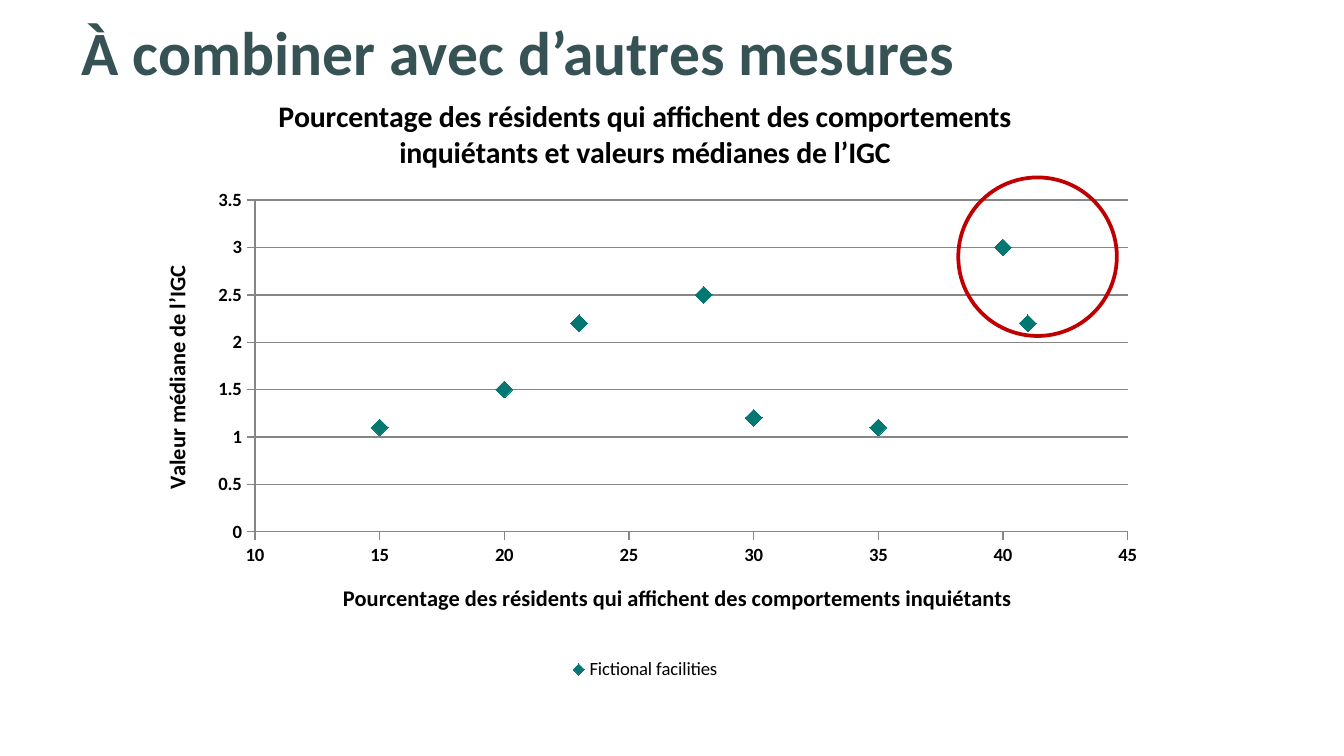
from pptx import Presentation
from pptx.chart.data import XyChartData
from pptx.dml.color import RGBColor as Rgb
from pptx.enum.chart import XL_CHART_TYPE as Kind, XL_LEGEND_POSITION as Side
from pptx.enum.chart import XL_MARKER_STYLE as Mark, XL_TICK_MARK as Tick
from pptx.enum.shapes import MSO_SHAPE as Shape
from pptx.enum.text import MSO_ANCHOR as Anchor
from pptx.oxml import parse_xml
from pptx.oxml.ns import nsdecls, qn
from pptx.util import Inches, Pt

WIDE = 10
HIGH = WIDE * 9 / 16
HEAD = "À combiner avec d’autres mesures"
TITLE = ("Pourcentage des résidents qui affichent des comportements "
         "inquiétants et valeurs médianes de l’IGC")
SERIES = "Fictional facilities"
POINTS = [(20, 1.5), (30, 1.2), (15, 1.1), (35, 1.1),
          (41, 2.2), (23, 2.2), (40, 3), (28, 2.5)]
AXES = {
    "x": ("Pourcentage des résidents qui affichent des comportements inquiétants",
          10, 45, 5),
    "y": ("Valeur médiane de l’IGC", 0, 3.5, 0.5),
}
BOXES = {"head": (0.51, 0.14, 9, 0.47), "chart": (0.98, 0.53, 7.64, 4.57),
         "ring": (7.13, 1.32, 1.18, 1.18)}
PLOT = {"x": 0.12, "y": 0.21, "w": 0.85, "h": 0.54}
THEME = {"font": "Calibri", "head": "365254", "text": "000000", "dot": "037872",
         "grid": "868686", "ring": "C00000",
         "size": {"head": 33, "title": 16, "axis": 12, "tick": 10}}


def color(name):
    return Rgb.from_string(THEME[name])


def place(name):
    return [Inches(n) for n in BOXES[name]]


def style(font, size, tone="text", bold=True):
    font.name = THEME["font"]
    font.size = Pt(THEME["size"][size])
    font.bold = bold
    font.color.rgb = color(tone)


def write(frame, text, size, tone="text"):
    run = frame.paragraphs[0].add_run()
    run.text = text
    style(run.font, size, tone)


def stroke(line, tone, width):
    line.color.rgb = color(tone)
    line.width = Pt(width)


def set_axis(axis, title, low, high, step):
    axis.minimum_scale, axis.maximum_scale = low, high
    axis.major_unit = step
    axis.major_tick_mark = Tick.OUTSIDE
    axis.minor_tick_mark = Tick.NONE
    axis.tick_labels.number_format = "General"
    axis.tick_labels.number_format_is_linked = False
    style(axis.tick_labels.font, "tick")
    stroke(axis.format.line, "grid", 0.75)
    write(axis.axis_title.text_frame, title, "axis")


def fix_plot(chart):
    area = chart.plots[0]._element.getparent()
    for old in area.findall(qn("c:layout")):
        area.remove(old)
    modes = "".join(f'<c:{k}Mode val="edge"/>' for k in "xy")
    sizes = "".join(f'<c:{k} val="{v}"/>' for k, v in PLOT.items())
    area.insert(0, parse_xml(
        f'<c:layout {nsdecls("c")}><c:manualLayout><c:layoutTarget val="inner"/>'
        f'{modes}{sizes}</c:manualLayout></c:layout>'))


def add_plot(slide):
    data = XyChartData()
    group = data.add_series(SERIES)
    for x, y in POINTS:
        group.add_data_point(x, y)
    chart = slide.shapes.add_chart(Kind.XY_SCATTER, *place("chart"), data).chart
    style(chart.font, "tick", bold=False)
    chart.has_title = True
    write(chart.chart_title.text_frame, TITLE, "title")
    chart.chart_title.include_in_layout = False
    chart.has_legend = True
    chart.legend.position = Side.BOTTOM
    chart.legend.include_in_layout = False
    style(chart.legend.font, "tick", bold=False)
    set_axis(chart.category_axis, *AXES["x"])
    set_axis(chart.value_axis, *AXES["y"])
    chart.category_axis.has_major_gridlines = False
    chart.value_axis.has_major_gridlines = True
    stroke(chart.value_axis.major_gridlines.format.line, "grid", 0.75)
    chart.plots[0].vary_by_categories = False
    dots = chart.plots[0].series[0]
    dots.smooth = False
    dots.format.line.fill.background()
    dots.marker.style = Mark.DIAMOND
    dots.marker.size = 9
    dots.marker.format.fill.solid()
    dots.marker.format.fill.fore_color.rgb = color("dot")
    stroke(dots.marker.format.line, "dot", 0.75)
    fix_plot(chart)


def main():
    """Build the slide with its heading, scatter chart and ring."""
    deck = Presentation()
    deck.slide_width, deck.slide_height = Inches(WIDE), Inches(HIGH)
    slide = deck.slides.add_slide(deck.slide_layouts[6])
    add_plot(slide)
    frame = slide.shapes.add_textbox(*place("head")).text_frame
    frame.word_wrap = True
    frame.vertical_anchor = Anchor.MIDDLE
    write(frame, HEAD, "head", "head")
    ring = slide.shapes.add_shape(Shape.OVAL, *place("ring"))
    ring.shadow.inherit = False
    ring.fill.background()
    stroke(ring.line, "ring", 2)
    deck.save("out.pptx")


if __name__ == "__main__":
    main()
